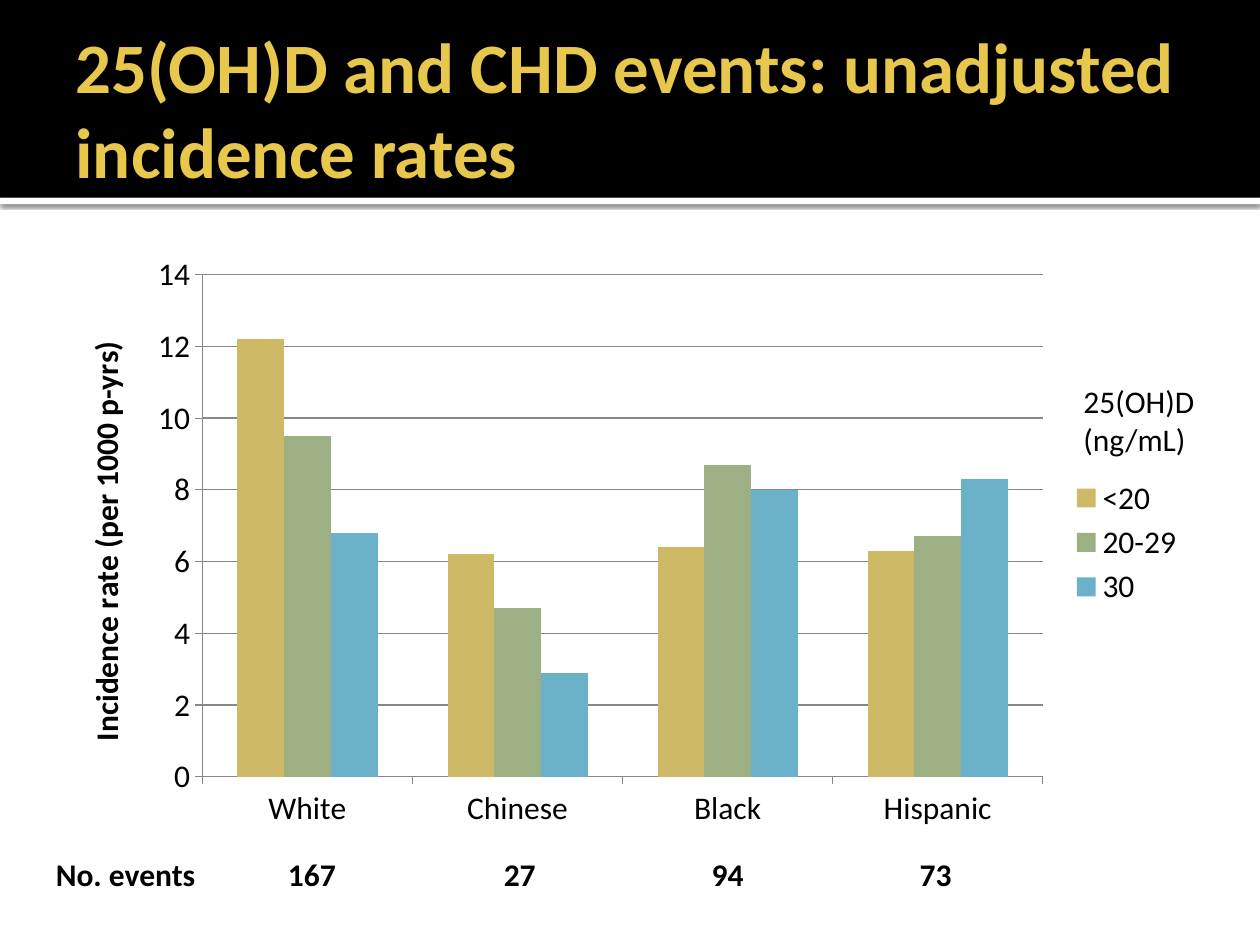
from lxml.etree import SubElement
from pptx import Presentation
from pptx.chart.data import CategoryChartData
from pptx.dml.color import RGBColor
from pptx.enum.chart import XL_CHART_TYPE as ChartType, XL_LEGEND_POSITION as LegendPosition
from pptx.enum.chart import XL_TICK_MARK as TickMark
from pptx.enum.shapes import MSO_SHAPE as Shape
from pptx.enum.text import MSO_ANCHOR as Anchor, MSO_AUTO_SIZE as AutoSize, PP_ALIGN as Align
from pptx.oxml import parse_xml
from pptx.oxml.ns import nsdecls, qn
from pptx.util import Inches, Pt

BLACK = RGBColor(0x00, 0x00, 0x00)
WHITE = RGBColor(0xFF, 0xFF, 0xFF)
GOLD = RGBColor(0xE8, 0xC8, 0x4C)
GRAY = RGBColor(0x87, 0x87, 0x87)
SAND = RGBColor(0xCE, 0xB9, 0x66)
SAGE = RGBColor(0x9C, 0xB0, 0x84)
SKY = RGBColor(0x6B, 0xB1, 0xC9)
FONT = "Calibri"
BODY_SIZE = 18

GROUPS = ["White", "Chinese", "Black", "Hispanic"]
RATES = [
    ("<20", [12.2, 6.2, 6.4, 6.3], SAND),
    ("20-29", [9.5, 4.7, 8.7, 6.7], SAGE),
    ("30", [6.8, 2.9, 8, 8.3], SKY),
]
EVENTS = ["No. events", "167", "27", "94", "73"]


def style_font(font, size=BODY_SIZE, color=BLACK, bold=False):
    font.name, font.size, font.bold = FONT, Pt(size), bold
    font.color.rgb = color


def add_span(para, text, **style):
    span = para.add_run()
    span.text = text
    style_font(span.font, **style)


deck = Presentation()
deck.slide_width, deck.slide_height = Inches(10), Inches(7.5)
page = deck.slides.add_slide(deck.slide_layouts[5])
title = page.shapes.title
margin = deck.slide_width * 0.05
content_width = deck.slide_width * 0.9

# Header: a white strip with a shadow, under a black band
band_height = Inches(1.57)
for top, height, color in [(band_height, Inches(0.05), WHITE), (0, band_height, BLACK)]:
    band = page.shapes.add_shape(Shape.RECTANGLE, 0, top, deck.slide_width, height)
    band.shadow.inherit = False
    band.fill.solid()
    band.fill.fore_color.rgb = color
    band.line.fill.background()
    if color == WHITE:
        effects = band.element.spPr.find(qn("a:effectLst"))
        shadow = SubElement(effects, qn("a:outerShdw"), blurRad=str(Pt(2.5)),
                            dist=str(Pt(0.8)), dir="5400000", algn="tl", rotWithShape="0")
        shade = SubElement(shadow, qn("a:srgbClr"), val=str(BLACK))
        SubElement(shade, qn("a:alpha"), val="60000")

# Title, brought in front of the header
title.element.getparent().append(title.element)
title.left, title.top = int(margin), Inches(0.17)
title.width, title.height = int(content_width), Inches(1.37)
frame = title.text_frame
frame.word_wrap, frame.auto_size = True, AutoSize.NONE
frame.vertical_anchor = Anchor.MIDDLE
frame.margin_left = Inches(0.1)
frame.margin_right = frame.margin_top = frame.margin_bottom = Inches(0.05)
frame.paragraphs[0].alignment = Align.LEFT
add_span(frame.paragraphs[0], "25(OH)D and CHD events: unadjusted incidence rates",
         size=40.5, color=GOLD, bold=True)

# Incidence chart
data = CategoryChartData()
data.categories = GROUPS
for name, values, _ in RATES:
    data.add_series(name, values)
chart = page.shapes.add_chart(ChartType.COLUMN_CLUSTERED, int(margin), Inches(1.94),
                              int(content_width), Inches(4.73), data).chart
style_font(chart.font)
chart.has_title = False
chart.has_legend = True
chart.legend.position = LegendPosition.RIGHT
chart.legend.include_in_layout = False

plot = chart.plots[0]
plot.gap_width, plot.overlap = 150, 0
plot.vary_by_categories = False
for series, (_, _, color) in zip(plot.series, RATES):
    series.format.fill.solid()
    series.format.fill.fore_color.rgb = color

rate_axis = chart.value_axis
rate_axis.minimum_scale, rate_axis.maximum_scale, rate_axis.major_unit = 0, 14, 2
rate_axis.has_major_gridlines = True
add_span(rate_axis.axis_title.text_frame.paragraphs[0],
         "Incidence rate (per 1000 p-yrs)", bold=True)
for axis in (rate_axis, chart.category_axis):
    axis.major_tick_mark = TickMark.OUTSIDE
    style_font(axis.tick_labels.font)
for ruled in (rate_axis, chart.category_axis, rate_axis.major_gridlines):
    ruled.format.line.color.rgb = GRAY
    ruled.format.line.width = Pt(0.75)

# Fixed plot area, as shares of the chart
plot_area = chart.element.find(".//" + qn("c:plotArea"))
for layout in plot_area.findall(qn("c:layout")):
    plot_area.remove(layout)
layout = parse_xml(f"<c:layout {nsdecls('c')}/>")
plot_area.insert(0, layout)
manual = SubElement(layout, qn("c:manualLayout"))
for tag, value in [("layoutTarget", "inner"), ("xMode", "edge"), ("yMode", "edge"),
                   ("x", "0.123"), ("y", "0.051"), ("w", "0.741"), ("h", "0.842")]:
    SubElement(manual, qn("c:" + tag), val=value)

# Event counts under the chart
table = page.shapes.add_table(1, len(EVENTS), 0, Inches(6.75), Inches(8.25), Inches(0.41)).table
for column, (cell, text) in enumerate(zip(table.rows[0].cells, EVENTS)):
    cell.fill.background()
    para = cell.text_frame.paragraphs[0]
    para.alignment = Align.CENTER if column else Align.RIGHT
    add_span(para, text, bold=True)

# Legend heading
box = page.shapes.add_textbox(Inches(8.5), Inches(2.92), Inches(1.25), Inches(0.83))
frame = box.text_frame
frame.word_wrap = True
frame.vertical_anchor = Anchor.MIDDLE
add_span(frame.paragraphs[0], "25(OH)D")
add_span(frame.add_paragraph(), "(ng/mL)")

deck.save("out.pptx")
